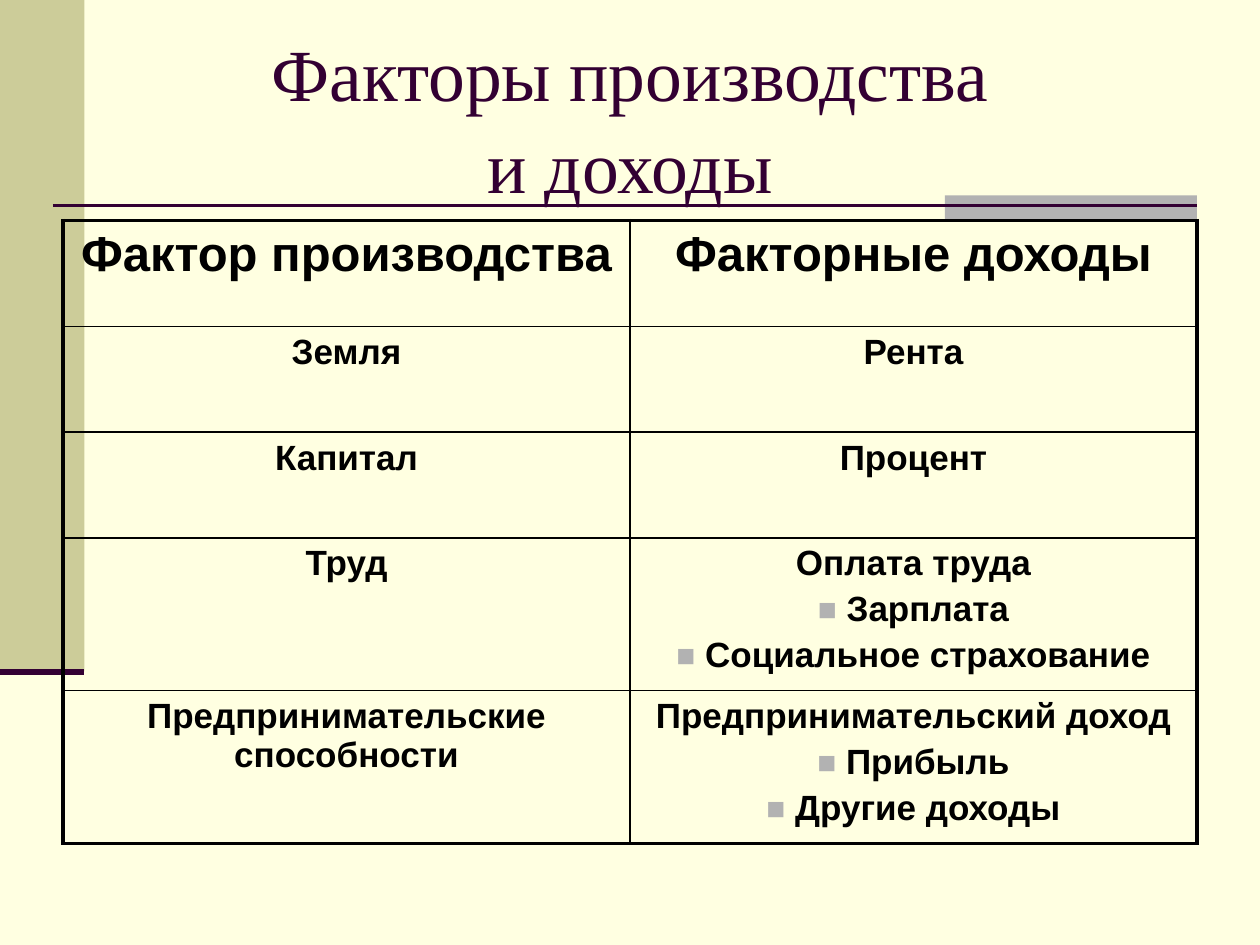
from pptx import Presentation
from pptx.dml.color import RGBColor as RGB
from pptx.enum.shapes import MSO_CONNECTOR as Conn, MSO_SHAPE as Shape
from pptx.enum.text import MSO_ANCHOR as Anchor, PP_ALIGN as Align
from pptx.oxml.ns import qn
from pptx.util import Inches, Pt
from lxml.etree import SubElement as Sub

CREAM = RGB(0xFF, 0xFF, 0xE1)
OLIVE = RGB(0xCC, 0xCC, 0x99)
GREY = RGB(0xB2, 0xB2, 0xB2)
PLUM = RGB(0x33, 0x00, 0x33)
BLACK = RGB(0x00, 0x00, 0x00)

COLS, ROWS = 20, 15  # grid of half-inch squares
THICK, THIN = 2.25, 1

TITLE = ["Факторы производства", "и доходы"]
TABLE = [
    (["Фактор производства"], ["Факторные доходы"]),
    (["Земля"], ["Рента"]),
    (["Капитал"], ["Процент"]),
    (["Труд"], ["Оплата труда", "Зарплата", "Социальное страхование"]),
    (["Предпринимательские способности"],
     ["Предпринимательский доход", "Прибыль", "Другие доходы"]),
]
HIGHS = [1.68, 1.68, 1.68, 2.28, 2.28]


class Deck:
    """Holds the style and the current slide; lengths are grid units."""

    def __init__(self):
        self.prs = Presentation()
        self.prs.slide_width = Inches(10)
        self.prs.slide_height = Inches(7.5)
        self.wide = self.prs.slide_width / COLS
        self.high = self.prs.slide_height / ROWS
        self.slide = self.prs.slides.add_slide(self.prs.slide_layouts[6])
        back = self.slide.background.fill
        back.solid()
        back.fore_color.rgb = CREAM

    def place(self, x, y, w, h):
        return (round(x * self.wide), round(y * self.high),
                round(w * self.wide), round(h * self.high))

    def block(self, box, color):
        shape = self.slide.shapes.add_shape(Shape.RECTANGLE, *self.place(*box))
        shape.shadow.inherit = False
        shape.fill.solid()
        shape.fill.fore_color.rgb = color
        shape.line.fill.background()

    def rule(self, left, right, y, width):
        ends = self.place(left, y, right, y)
        line = self.slide.shapes.add_connector(Conn.STRAIGHT, *ends)
        line.line.color.rgb = PLUM
        line.line.width = Pt(width)
        Sub(line._element.spPr, qn("a:effectLst"))

    def add_text(self, para, text, face, size, color, bold=False):
        run = para.add_run()
        run.text = text
        font = run.font
        font.name, font.size, font.bold = face, Pt(size), bold
        font.color.rgb = color

    def title(self, box, lines):
        frame = self.slide.shapes.add_textbox(*self.place(*box)).text_frame
        frame.word_wrap = True
        frame.vertical_anchor = Anchor.MIDDLE
        para = frame.paragraphs[0]
        para.alignment = Align.CENTER
        para.line_spacing = 1.04
        for i, text in enumerate(lines):
            if i:
                para.add_line_break()
            self.add_text(para, text, "Times New Roman", 42, PLUM)

    def bullet(self, para):
        props = para._p.get_or_add_pPr()
        props.set("marL", "0")
        props.set("indent", "0")
        Sub(Sub(props, qn("a:buClr")), qn("a:srgbClr"), val=str(GREY))
        Sub(props, qn("a:buSzPct"), val="90000")
        Sub(props, qn("a:buFont"), typeface="Arial")
        Sub(props, qn("a:buChar"), char="■")

    def edge(self, cell, side, width):
        line = Sub(cell._tc.get_or_add_tcPr(), qn("a:ln" + side),
                   w=str(Pt(width)))
        Sub(Sub(line, qn("a:solidFill")), qn("a:srgbClr"), val=str(BLACK))

    def fill_cell(self, cell, lines, size):
        """Add a heading line, then any further lines as bullets."""
        frame = cell.text_frame
        for i, text in enumerate(lines):
            para = frame.add_paragraph() if i else frame.paragraphs[0]
            para.alignment = Align.CENTER
            if i:
                para.space_before = Pt(size * 0.2)
                self.bullet(para)
                text = " " + text
            self.add_text(para, text, "Arial", size, BLACK, True)

    def table(self, x, y, w, data, highs):
        rows, cols = len(data), len(data[0])
        box = self.place(x, y, w, sum(highs))
        table = self.slide.shapes.add_table(rows, cols, *box).table
        table.first_row = table.horz_banding = False
        for r, line in enumerate(data):
            table.rows[r].height = round(highs[r] * self.high)
            for c, texts in enumerate(line):
                cell = table.cell(r, c)
                outer = {"L": c == 0, "R": c == cols - 1,
                         "T": r == 0, "B": r == rows - 1}
                for side, out in outer.items():
                    self.edge(cell, side, THICK if out else THIN)
                cell.fill.background()
                self.fill_cell(cell, texts, 20 if r else 28)


def main():
    deck = Deck()
    deck.block((0, 0, 1.34, 10.66), OLIVE)
    deck.block((15, 3.1, 4, 0.4), GREY)
    deck.rule(0.84, 19, 3.26, 1.5)
    deck.rule(0, 1.34, 10.66, 3.5)
    deck.title((1, 0.6, 18, 2.5), TITLE)
    deck.table(1, 3.5, 18, TABLE, HIGHS)
    deck.prs.save("out.pptx")


if __name__ == "__main__":
    main()
